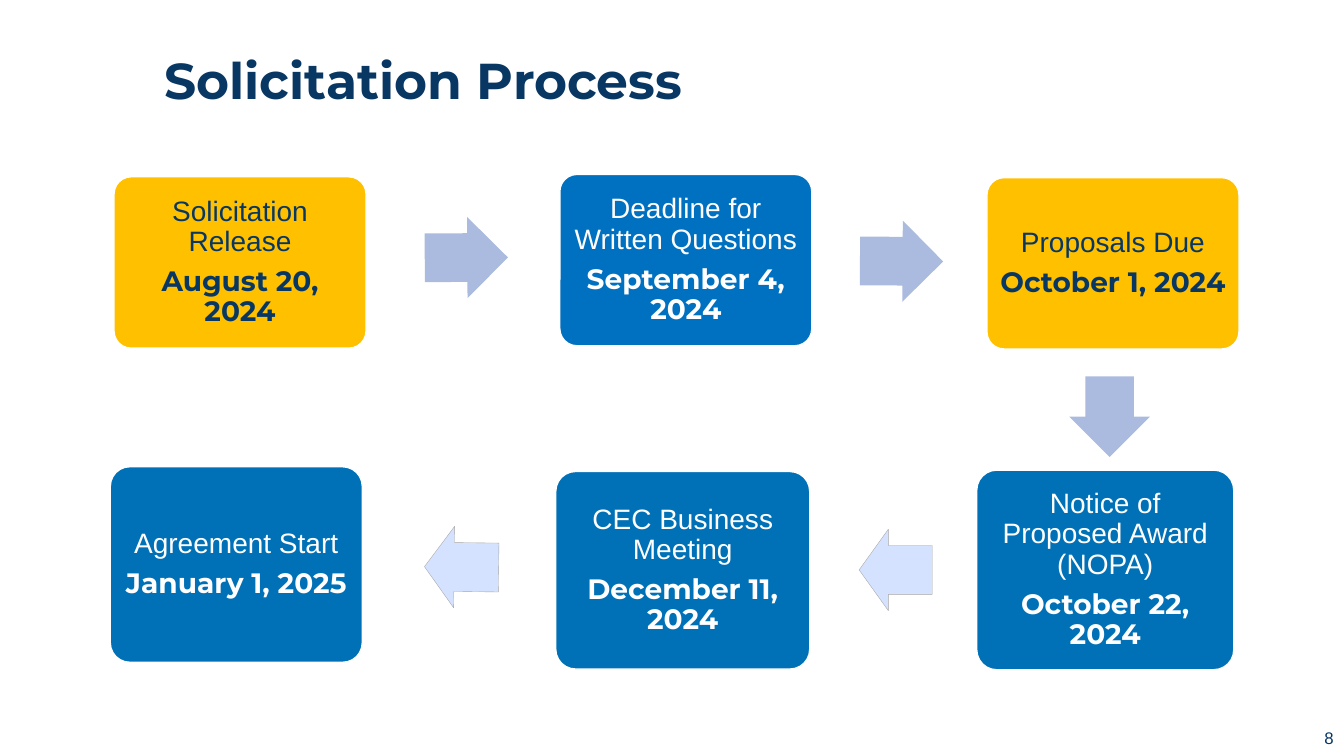
from pptx import Presentation
from pptx.dml.color import RGBColor
from pptx.enum.shapes import MSO_SHAPE
from pptx.enum.text import MSO_ANCHOR, PP_ALIGN
from pptx.util import Pt

NAVY, WHITE, GOLD, BLUE, DEEP_BLUE = "083763", "FFFFFF", "FFC000", "0070C0", "0071B6"
PERIWINKLE, PALE_BLUE, GREY = "ABBBDF", "D4E2FF", "A6A6A6"


def rgb(hex_color):
    return RGBColor.from_string(hex_color)


def write(paragraph, text, size, font, color, bold, align):
    run = paragraph.add_run()
    run.text = text
    for key, value in {"size": Pt(size), "name": font, "bold": bold}.items():
        setattr(run.font, key, value)
    run.font.color.rgb = rgb(color)
    paragraph.alignment = align


deck = Presentation()
deck.slide_width, deck.slide_height = Pt(960), Pt(540)
slide = deck.slides.add_slide(deck.slide_layouts[5])

title = slide.shapes.title
title.left, title.top, title.width, title.height = Pt(110.2), Pt(18.7), Pt(837.4), Pt(82.1)
title.text_frame.vertical_anchor = MSO_ANCHOR.MIDDLE
heading = title.text_frame.paragraphs[0]
heading.line_spacing = 0.9
write(heading, "Solicitation Process", 36, "Montserrat", NAVY, True, PP_ALIGN.LEFT)

# step, date, left, top, width, height, fill, text colour
milestones = [
    ("Solicitation Release", "August 20, 2024", 81.5, 126.3, 180, 122.4, GOLD, NAVY),
    ("Deadline for Written Questions", "September 4, 2024", 399.9, 124.6, 180, 122.4, BLUE, WHITE),
    ("Proposals Due", "October 1, 2024", 705, 126.9, 180, 122.4, GOLD, NAVY),
    ("Notice of Proposed Award (NOPA)", "October 22, 2024", 697.7, 335.8, 183.6, 142.6, DEEP_BLUE, WHITE),
    ("CEC Business Meeting", "December 11, 2024", 397, 336.8, 181.4, 141.1, DEEP_BLUE, WHITE),
    ("Agreement Start", "January 1, 2025", 78.8, 333.4, 180, 139.7, DEEP_BLUE, WHITE),
]
for step, date, left, top, width, height, fill, color in milestones:
    card = slide.shapes.add_shape(
        MSO_SHAPE.ROUNDED_RECTANGLE, Pt(left), Pt(top), Pt(width), Pt(height))
    card.adjustments[0] = 0.1
    card.shadow.inherit = False
    card.fill.solid()
    card.fill.fore_color.rgb = rgb(fill)
    card.line.color.rgb = rgb(WHITE)
    card.line.width = Pt(1)
    frame = card.text_frame
    frame.word_wrap = True
    frame.vertical_anchor = MSO_ANCHOR.MIDDLE
    for side in ("left", "right", "top", "bottom"):
        setattr(frame, f"margin_{side}", Pt(5.5))
    step_line, date_line = frame.paragraphs[0], frame.add_paragraph()
    step_line.space_after = Pt(7)
    step_line.line_spacing = date_line.line_spacing = 0.9
    write(step_line, step, 20, "Arial", color, False, PP_ALIGN.CENTER)
    write(date_line, date, 20, "Montserrat", color, True, PP_ALIGN.CENTER)

# preset, left, top, width, height, rotation, head length, fill, outline
arrows = [
    (MSO_SHAPE.RIGHT_ARROW, 303.4, 155, 59.4, 58, -0.3, 0.5, PERIWINKLE, None),
    (MSO_SHAPE.RIGHT_ARROW, 614.3, 157.6, 59.4, 58, 0.4, 0.5, PERIWINKLE, None),
    (MSO_SHAPE.RIGHT_ARROW, 763.8, 268.8, 57.6, 57.6, 90, 0.5, PERIWINKLE, None),
    (MSO_SHAPE.LEFT_ARROW, 613.7, 378, 52.2, 58.2, 0, 0.4, PALE_BLUE, GREY),
    (MSO_SHAPE.LEFT_ARROW, 303.2, 376, 53, 58.2, 0.7, 0.4, PALE_BLUE, GREY),
]
for preset, left, top, width, height, rotation, head, fill, outline in arrows:
    arrow = slide.shapes.add_shape(preset, Pt(left), Pt(top), Pt(width), Pt(height))
    arrow.adjustments[0], arrow.adjustments[1] = 0.6, head
    arrow.rotation = rotation
    arrow.shadow.inherit = False
    arrow.fill.solid()
    arrow.fill.fore_color.rgb = rgb(fill)
    if outline:
        arrow.line.color.rgb = rgb(outline)
        arrow.line.width = Pt(0.25)
    else:
        arrow.line.fill.background()

page_number = slide.shapes.add_textbox(Pt(817.9), Pt(512.6), Pt(141.8), Pt(28.8)).text_frame
page_number.word_wrap = True
page_number.vertical_anchor = MSO_ANCHOR.MIDDLE
write(page_number.paragraphs[0], "8", 12, "Arial", NAVY, False, PP_ALIGN.RIGHT)

deck.save("out.pptx")
